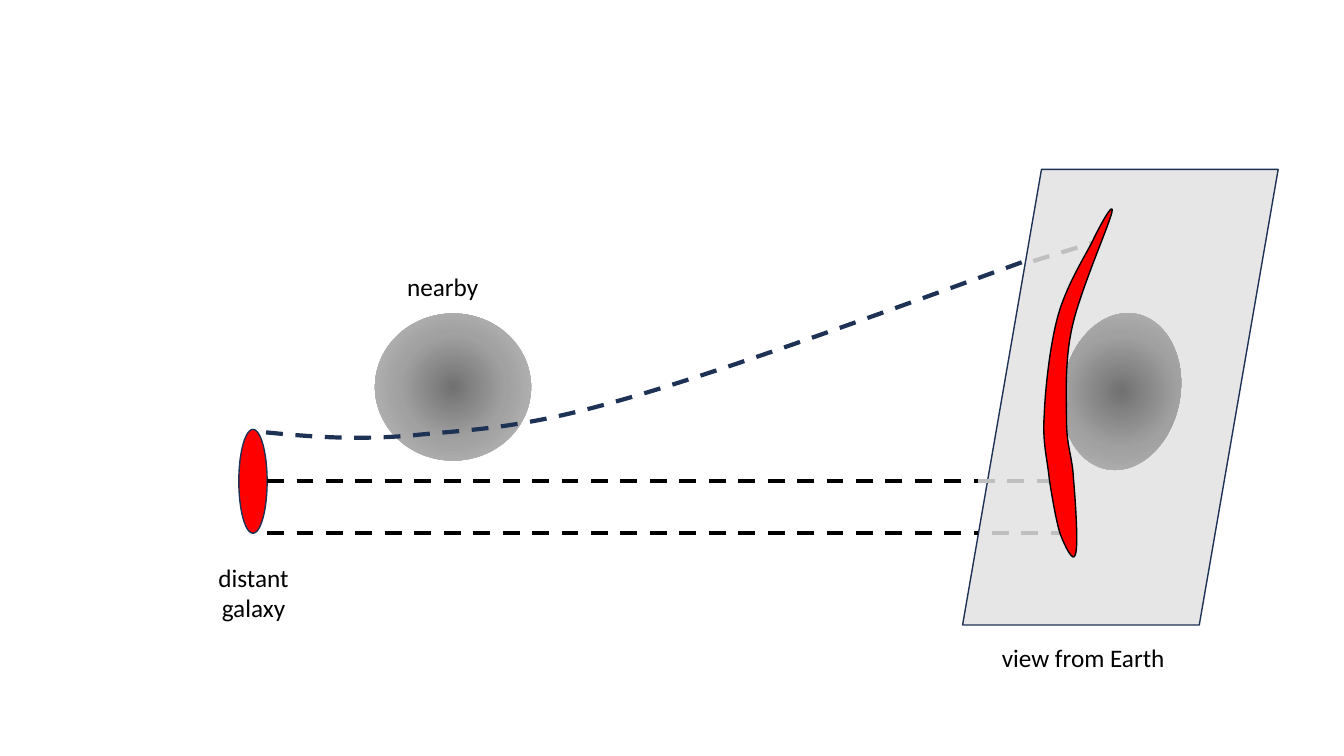
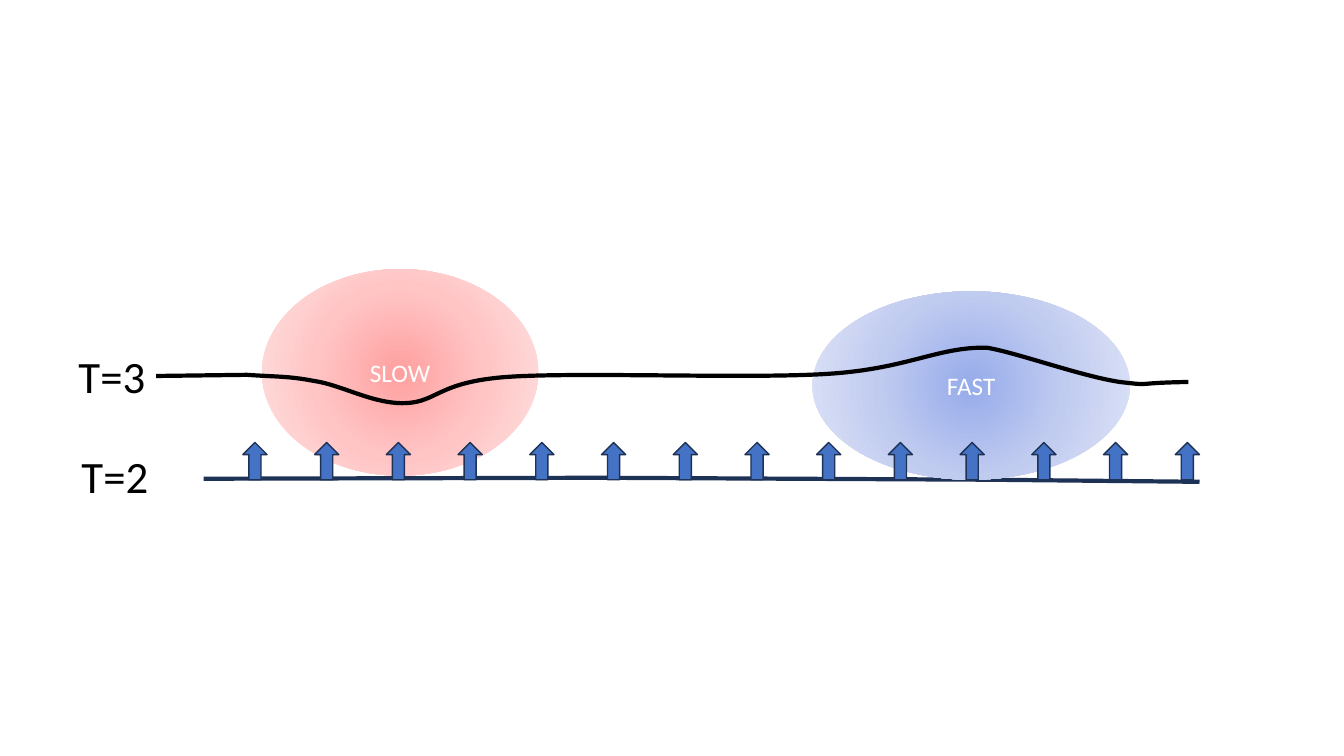
from lxml.etree import SubElement
from pptx import Presentation
from pptx.dml.color import RGBColor
from pptx.enum.dml import MSO_LINE
from pptx.enum.shapes import MSO_CONNECTOR, MSO_SHAPE as Preset
from pptx.enum.text import MSO_ANCHOR, MSO_AUTO_SIZE, PP_ALIGN as Align
from pptx.oxml.ns import qn
from pptx.util import Pt

BLACK = RGBColor(0x00, 0x00, 0x00)
WHITE = RGBColor(0xFF, 0xFF, 0xFF)
NAVY = RGBColor(0x1E, 0x32, 0x56)
BLUE = RGBColor(0x44, 0x72, 0xC4)
RED = RGBColor(0xFF, 0x00, 0x00)
PALE_GREY = RGBColor(0xE7, 0xE6, 0xE6)
FADED = RGBColor(0xBF, 0xBF, 0xBF)
GREY_GLOW = ("717171", "A1A1A1", "BFBFBF")
RED_GLOW = ("FFA0A0", "FFC5C5", "FFE3E3")
BLUE_GLOW = ("96ABEA", "C0CBF0", "E0E5F7")
FONT = "Calibri"
THIN, THICK = 1, 3

# Boxes are (left, top, width, height); all lengths are points.
DISTANT_GALAXY = (170.6, 306.7, 20.2, 74.2)
NEARBY_GALAXY = (267.8, 223.9, 111.6, 105.1)
VIEW_PLANE = (687.6, 121, 225.4, 325.4)
NEARBY_IN_VIEW = (744.5, 237.6, 113, 84.2)
NEARBY_TILT = 100.7
RAYS = [
    ((190.8, 380.9), (698.4, 380.9), BLACK),
    ((190.8, 343.4), (698.4, 343.4), BLACK),
    ((698.4, 343.4), (758.2, 343.4), FADED),
    ((708.5, 380.9), (758.2, 380.9), FADED),
    ((738, 186.5), (780.5, 173.5), FADED),
]
# Curves hold a start point, then two controls and an end for each segment.
BENT_RAY = [
    (190.1, 308.9),
    (221, 311.8), (252, 314.6), (294.5, 311),
    (336.2, 306.7), (370.8, 306.7), (443.5, 285.8),
    (517, 265), (625, 225.4), (732.2, 186.5),
]
LENSED_ARC = [
    (779.8, 173.5),
    (773.3, 185.8), (761.8, 204.5), (756, 224.6),
    (750.2, 244.8), (746.6, 277.2), (745.9, 296.6),
    (744.5, 316.1), (748.1, 327.6), (749.5, 342),
    (751.7, 356.4), (754.6, 373), (757.4, 381.6),
    (761, 391), (766.8, 402.5), (768.2, 396),
    (770.4, 389.5), (768.2, 357.8), (766.8, 342),
    (766.1, 326.2), (761.8, 319), (761.8, 300.2),
    (761.8, 282.2), (760.3, 257.8), (766.1, 232.6),
    (771.8, 207.4), (792, 161.3), (794.2, 151.9),
    (796.3, 141.8), (785.5, 161.3), (779.8, 173.5),
]
LENS_LABELS = [
    (("distant", "galaxy"), (148.3, 398.2, 65.5, 51.1), Align.CENTER),
    (("nearby",), (283.7, 190.1, 66.2, 28.8), Align.LEFT),
    (("view from Earth",), (708.5, 455, 132.5, 28.8), Align.LEFT),
]

EARLY_FRONT = [(145.4, 342), (429.1, 341.3), (706.3, 342.7), (856.8, 344.2)]
REGIONS = [
    ("SLOW", (187.2, 192.2, 197.3, 147.6), RED_GLOW),
    ("FAST", (580.3, 208.1, 226.8, 134.6), BLUE_GLOW),
]
LATE_FRONT = [
    (111.6, 268.6),
    (111.6, 268.6), (176.4, 267.8), (176.4, 267.8),
    (198, 269.3), (205.9, 268.6), (224.6, 272.2),
    (244.1, 275), (266.4, 288.7), (289.4, 288),
    (312.5, 287.3), (312.5, 272.9), (362.2, 269.3),
    (412.6, 265.7), (534.2, 270.7), (591.1, 267.1),
    (648.7, 263.5), (669.6, 247.7), (704.9, 248.4),
    (726.5, 252), (771.8, 268.6), (799.9, 272.9),
    (825.1, 275.8), (807.1, 273.6), (848.9, 272.9),
]
TIME_LABELS = [
    (("T=2",), (51.1, 316.8, 62.6, 46.1)),
    (("T=3",), (49, 245.5, 62.6, 46.1)),
]
ARROW_COUNT = 14
FIRST_ARROW, LAST_ARROW = 173.5, 839.5
ARROW_TOP, ARROW_WIDTH, ARROW_HEIGHT = 316.1, 17.3, 26.6


def points(values):
    return [Pt(value) for value in values]


def set_line(shape, color, width, dashed=False):
    shape.line.color.rgb = color
    shape.line.width = Pt(width)
    if dashed:
        shape.line.dash_style = MSO_LINE.DASH


def add_preset(shapes, preset, box, fill, line=None):
    """Add a preset shape; a tuple of three hex colours as fill is a radial glow."""
    shape = shapes.add_shape(preset, *points(box))
    shape.shadow.inherit = False
    if isinstance(fill, RGBColor):
        shape.fill.solid()
        shape.fill.fore_color.rgb = fill
    else:
        set_glow(shape, fill)
    if line is None:
        shape.line.fill.background()
    else:
        set_line(shape, line, THIN)
    return shape


def set_glow(shape, colors):
    """Fill from the centre outwards with evenly spaced colours."""
    shape.fill.gradient()
    gradient = shape.element.spPr.find(qn("a:gradFill"))
    for child in list(gradient):
        gradient.remove(child)
    stops = SubElement(gradient, qn("a:gsLst"))
    for index, color in enumerate(colors):
        position = index * 100000 // (len(colors) - 1)
        stop = SubElement(stops, qn("a:gs"), pos=str(position))
        SubElement(stop, qn("a:srgbClr"), val=color)
    circle = SubElement(gradient, qn("a:path"), path="circle")
    sides = dict.fromkeys("ltrb", "50000")
    SubElement(circle, qn("a:fillToRect"), **sides)


def add_outline(shapes, vertices, color, width, fill=None, curved=True, dashed=False):
    """Add a freeform, closed when it has a fill."""
    start, *rest = [points(vertex) for vertex in vertices]
    builder = shapes.build_freeform(*start)
    builder.add_line_segments(rest, close=fill is not None)
    shape = builder.convert_to_shape()
    shape.shadow.inherit = False
    if curved:
        bend_segments(shape)
    if fill is None:
        shape.fill.background()
    else:
        shape.fill.solid()
        shape.fill.fore_color.rgb = fill
    set_line(shape, color, width, dashed)


def bend_segments(shape):
    """Turn each three straight segments into one cubic curve."""
    segments = list(shape.element.iter(qn("a:lnTo")))
    for first in range(0, len(segments), 3):
        curve = segments[first].makeelement(qn("a:cubicBezTo"))
        segments[first].addprevious(curve)
        for segment in segments[first:first + 3]:
            curve.append(segment[0])
            segment.getparent().remove(segment)


def add_ray(shapes, start, end, color):
    ray = shapes.add_connector(MSO_CONNECTOR.STRAIGHT, *points(start + end))
    set_line(ray, color, THICK, dashed=True)
    SubElement(ray.element.spPr, qn("a:effectLst"))


def style_paragraph(para, size, color, align):
    para.alignment = align
    para.font.name = FONT
    para.font.size = Pt(size)
    para.font.color.rgb = color


def add_label(shapes, lines, box, size, align=Align.LEFT):
    frame = shapes.add_textbox(*points(box)).text_frame
    frame.word_wrap = False
    frame.auto_size = MSO_AUTO_SIZE.SHAPE_TO_FIT_TEXT
    frame.text = "\n".join(lines)
    for para in frame.paragraphs:
        style_paragraph(para, size, BLACK, align)


def draw_lensing(shapes):
    add_preset(shapes, Preset.OVAL, DISTANT_GALAXY, RED, NAVY)
    add_preset(shapes, Preset.OVAL, NEARBY_GALAXY, GREY_GLOW)
    add_preset(shapes, Preset.PARALLELOGRAM, VIEW_PLANE, PALE_GREY, NAVY)
    add_preset(shapes, Preset.OVAL, NEARBY_IN_VIEW, GREY_GLOW).rotation = NEARBY_TILT
    for start, end, color in RAYS:
        add_ray(shapes, start, end, color)
    add_outline(shapes, BENT_RAY, NAVY, THICK, dashed=True)
    add_outline(shapes, LENSED_ARC, BLACK, THIN, fill=RED)
    for lines, box, align in LENS_LABELS:
        add_label(shapes, lines, box, 18, align)


def draw_wavefronts(shapes):
    add_outline(shapes, EARLY_FRONT, NAVY, THICK, curved=False)
    for name, box, glow in REGIONS:
        frame = add_preset(shapes, Preset.OVAL, box, glow).text_frame
        frame.text = name
        frame.vertical_anchor = MSO_ANCHOR.MIDDLE
        style_paragraph(frame.paragraphs[0], 18, WHITE, Align.CENTER)
    add_outline(shapes, LATE_FRONT, BLACK, THICK)
    step = (LAST_ARROW - FIRST_ARROW) / (ARROW_COUNT - 1)
    for index in range(ARROW_COUNT):
        box = (FIRST_ARROW + index * step, ARROW_TOP, ARROW_WIDTH, ARROW_HEIGHT)
        add_preset(shapes, Preset.UP_ARROW, box, BLUE, NAVY)
    for lines, box in TIME_LABELS:
        add_label(shapes, lines, box, 32)


def main():
    deck = Presentation()
    deck.slide_width, deck.slide_height = Pt(960), Pt(540)
    blank = deck.slide_layouts[6]
    draw_lensing(deck.slides.add_slide(blank).shapes)
    wave_page = deck.slides.add_slide(blank)
    draw_wavefronts(wave_page.shapes.add_group_shape().shapes)
    deck.save("out.pptx")


if __name__ == "__main__":
    main()
